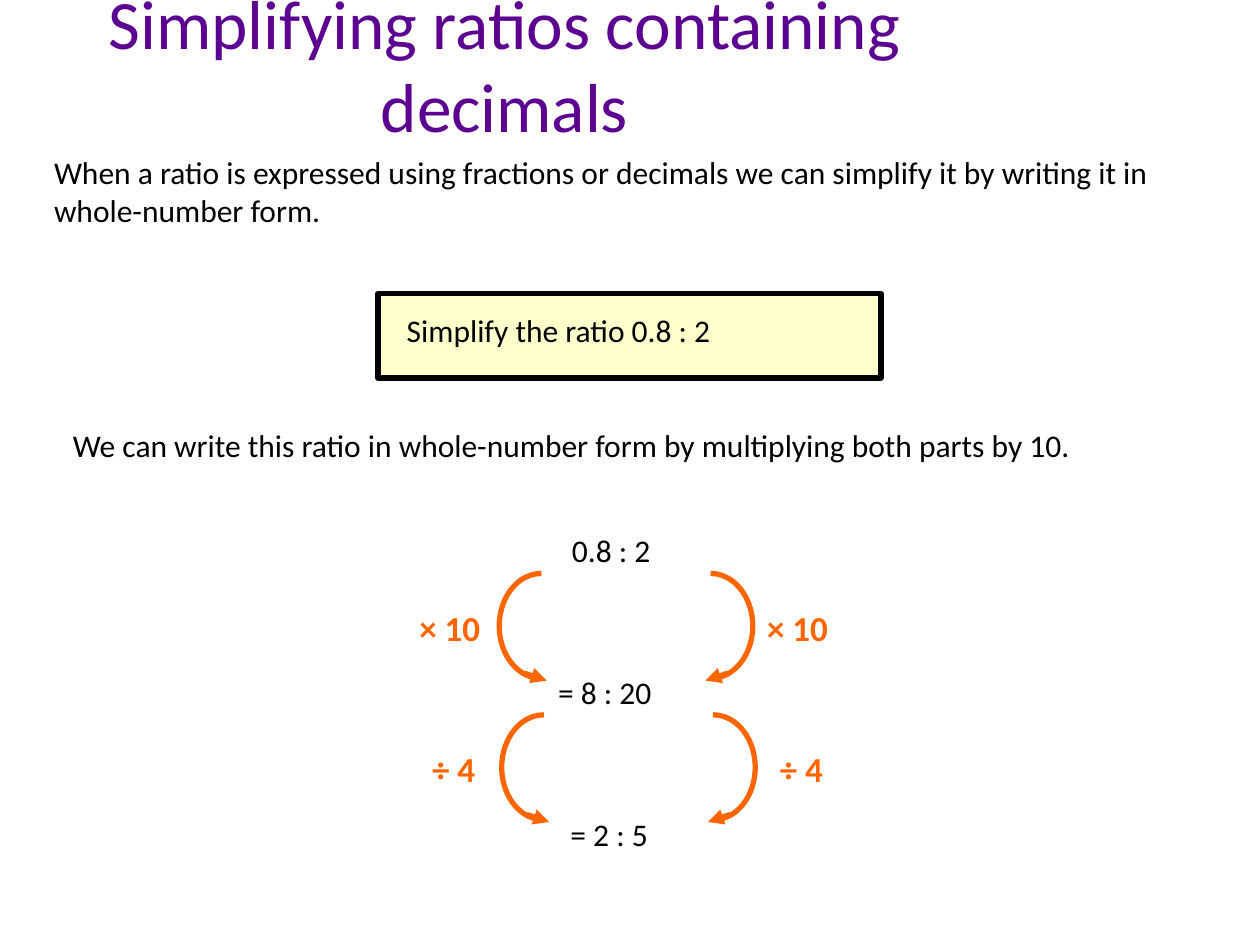
from dataclasses import dataclass

from lxml.etree import SubElement
from pptx import Presentation
from pptx.dml.color import RGBColor
from pptx.enum.shapes import MSO_CONNECTOR as Connector, MSO_SHAPE as Shape
from pptx.enum.text import MSO_ANCHOR as Anchor, PP_ALIGN as Align
from pptx.oxml.ns import qn
from pptx.util import Cm, Pt


@dataclass(frozen=True)
class Theme:
    font: str = "Calibri"
    ink: str = "000000"
    title: str = "5B0091"
    accent: str = "FF6600"
    panel: str = "FFFFCC"
    title_size: float = 39.6
    body_size: float = 18
    label_size: float = 20
    stroke: float = 3


THEME = Theme()


def add_text(shapes, text, left, top, width, height, *, size=THEME.body_size,
             color=THEME.ink, bold=False, align=Align.LEFT, anchor=Anchor.TOP, fill=None):
    box = shapes.add_textbox(Cm(left), Cm(top), Cm(width), Cm(height))
    if fill:
        box.fill.solid()
        box.fill.fore_color.rgb = RGBColor.from_string(fill)
    frame = box.text_frame
    frame.word_wrap = True
    frame.vertical_anchor = anchor
    paragraph = frame.paragraphs[0]
    paragraph.alignment = align
    run = paragraph.add_run()
    run.text = text
    run.font.name = THEME.font
    run.font.size = Pt(size)
    run.font.bold = bold
    run.font.color.rgb = RGBColor.from_string(color)


def set_line(shape, color):
    shape.line.color.rgb = RGBColor.from_string(color)
    shape.line.width = Pt(THEME.stroke)


def add_outline(shapes, kind, left, top, width, height, *, color, fill=None):
    shape = shapes.add_shape(kind, Cm(left), Cm(top), Cm(width), Cm(height))
    shape.shadow.inherit = False
    if fill:
        shape.fill.solid()
        shape.fill.fore_color.rgb = RGBColor.from_string(fill)
    else:
        shape.fill.background()
    set_line(shape, color)
    return shape


def add_arrow(shapes, start_x, start_y, end_x, end_y):
    arrow = shapes.add_connector(Connector.STRAIGHT, Cm(start_x), Cm(start_y),
                                 Cm(end_x), Cm(end_y))
    set_line(arrow, THEME.accent)
    SubElement(arrow.line._get_or_add_ln(), qn("a:tailEnd"), type="triangle")
    SubElement(arrow._element.spPr, qn("a:effectLst"))


def add_question(slide, text):
    group = slide.shapes.add_group_shape().shapes
    add_outline(group, Shape.RECTANGLE, 7.62, 5.92, 10.14, 1.7,
                color=THEME.ink, fill=THEME.panel)
    add_text(group, text, 7.95, 6.15, 9.53, 1.27, fill=THEME.panel)


def add_step(slide, label, label_width, axis, top):
    """Curved arrows mirrored about a vertical axis, each with its label."""
    group = slide.shapes.add_group_shape().shapes
    bracket_width, bracket_height = 0.85, 2.12
    sides = ((-1, Shape.LEFT_BRACKET, -3.46), (1, Shape.RIGHT_BRACKET, 3.55))
    for side, kind, label_offset in sides:
        center = axis + side * 2.13
        bracket = add_outline(group, kind, center - bracket_width / 2, top,
                              bracket_width, bracket_height, color=THEME.accent)
        bracket.adjustments[0] = 1.25
        add_arrow(group, axis + side * 2.05, top + 2.01, axis + side * 1.6, top + 2.16)
        add_text(group, label, axis + label_offset - label_width / 2, top + 0.54,
                 label_width, 1.09, size=THEME.label_size, color=THEME.accent, bold=True)


def main():
    presentation = Presentation()
    presentation.slide_width, presentation.slide_height = Cm(25.4), Cm(19.05)
    slide = presentation.slides.add_slide(presentation.slide_layouts[6])
    shapes = slide.shapes

    # Title and introduction
    add_text(shapes, "Simplifying ratios containing decimals", 0.43, 0.43, 19.48, 1.7,
             size=THEME.title_size, color=THEME.title, align=Align.CENTER,
             anchor=Anchor.MIDDLE)
    add_text(shapes, "When a ratio is expressed using fractions or decimals we can "
             "simplify it by writing it in whole-number form.", 0.84, 2.97, 23.32, 2.29)

    # Question and method
    add_question(slide, "Simplify the ratio 0.8 : 2")
    add_text(shapes, "We can write this ratio in whole-number form by multiplying "
             "both parts by 10.", 1.22, 8.46, 24.18, 2.29)

    # Ratios, one below the other
    ratios = (("0.8 : 2", 11.28, 2.87), ("= 8 : 20", 11.0, 3.35), ("= 2 : 5", 11.25, 2.9))
    for row, (ratio, left, width) in enumerate(ratios):
        add_text(shapes, ratio, left, 10.58 + row * 2.86, width, 1.27)

    # Operations between the ratios
    for row, (label, width) in enumerate((("× 10", 1.91), ("÷ 4", 1.5))):
        add_step(slide, label, width, 12.62 + row * 0.05, 11.56 + row * 2.85)

    presentation.save("out.pptx")


if __name__ == "__main__":
    main()
